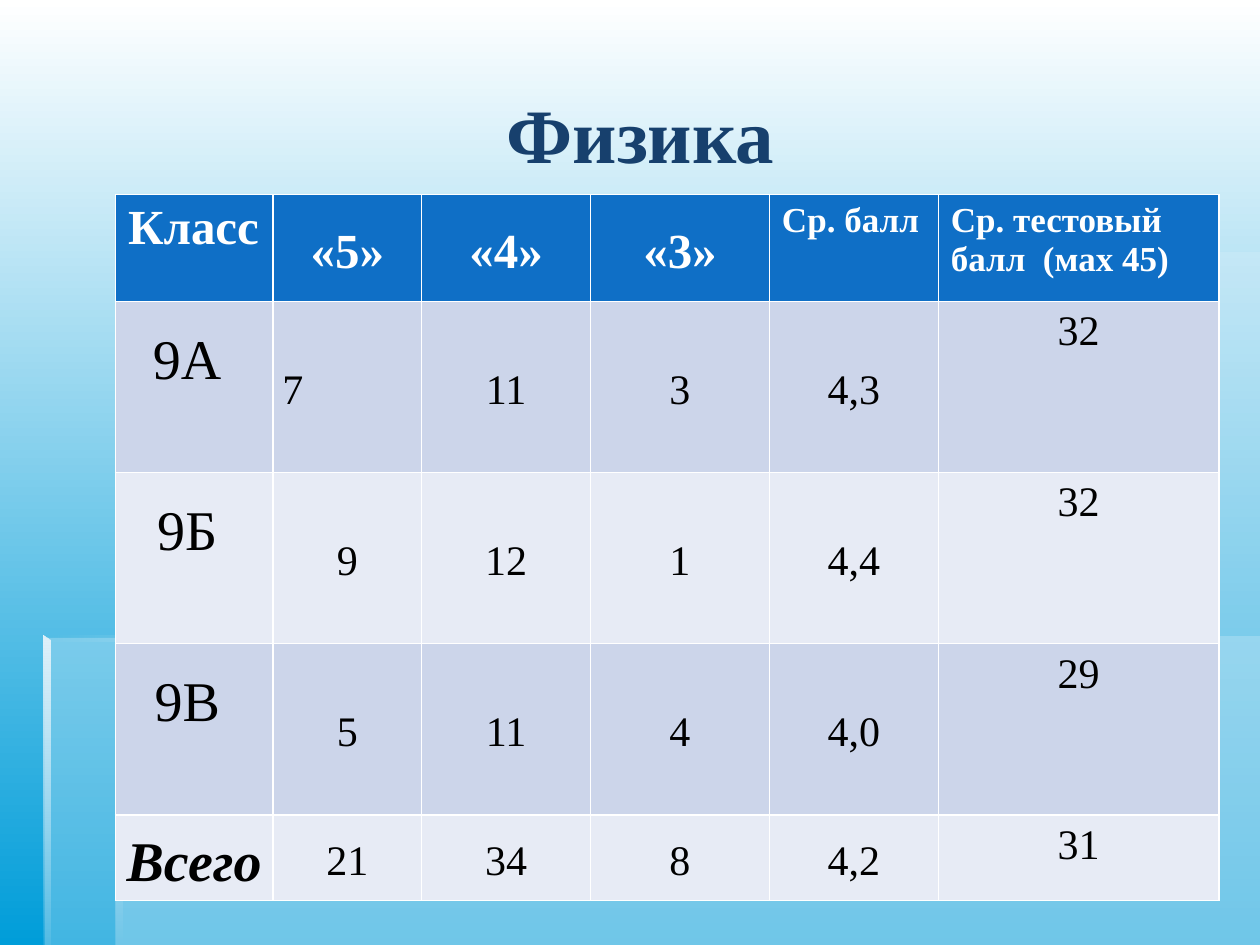
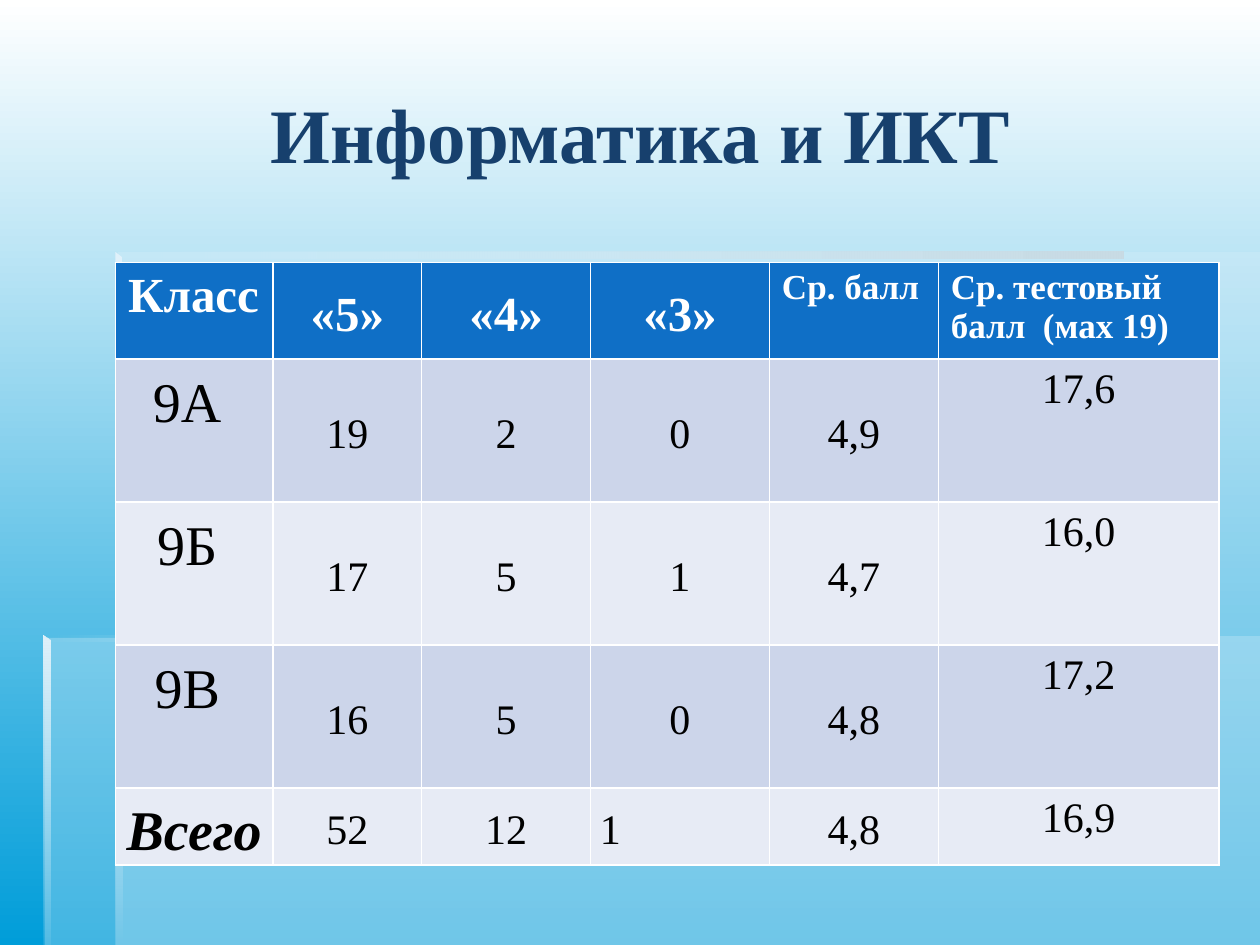
"""Builds two slides with ninth-grade exam results by subject."""
from pptx import Presentation
from pptx import util as u
from pptx.dml import color
from pptx.enum import text
from pptx.oxml import ns
from lxml import etree

FONT = "Times New Roman"
COLORS = {
    "sky_top": "FFFFFF", "sky_bottom": "009DD9", "panel": "DBEFF9",
    "edge_dark": "C9DBE4", "edge_light": "E0F1FA", "title": "17406D",
    "header": "0F6FC6", "header_text": "FFFFFF", "body_text": "000000",
    "odd_row": "CCD5EA", "even_row": "E7EBF5",
}
PAGE = (0, 0, 720, 540)
TITLE_BOX = (36, 19.4, 660, 113)
COLUMN_WIDTHS = (90, 85, 96.5, 102.2, 96.5, 160.5)
CLASSES = ("9А ", "9Б ", "9В ", "Всего ")
DOWN, RIGHT = 270, 0

SUBJECTS = [
    {
        "title": "Физика", "max_score": 45, "top": 111.3,
        "row_heights": (61, 97.8, 97.8, 97.8, 49), "left_aligned": (1, 1),
        "results": [("7", "11", "3", "4,3", "32"), ("9", "12", "1", "4,4", "32"),
                    ("5", "11", "4", "4,0", "29"), ("21", "34", "8", "4,2", "31")],
    },
    {
        "title": "Информатика и ИКТ", "max_score": 19, "top": 149.9,
        "row_heights": (51.5, 81.7, 81.7, 81.7, 41.5), "left_aligned": (4, 3),
        "results": [("19", "2", "0", "4,9", "17,6"), ("17", "5", "1", "4,7", "16,0"),
                    ("16", "5", "0", "4,8", "17,2"), ("52", "12", "1", "4,8", "16,9")],
    },
]


def rgb(name):
    """Return the named colour."""
    return color.RGBColor.from_string(COLORS[name])


def set_gradient(fill, names, angle):
    """Give a fill a gradient between two named colours."""
    fill.gradient()
    fill.gradient_angle = angle
    for stop, name in zip(fill.gradient_stops, names):
        stop.color.rgb = rgb(name)


def add_outline(slide, points, names, opacities, angle=None):
    """Draw a closed outline with a solid or gradient fill and given opacities."""
    corners = [(u.Pt(x), u.Pt(y)) for x, y in points]
    builder = slide.shapes.build_freeform(*corners[0])
    builder.add_line_segments(corners[1:], close=True)
    shape = builder.convert_to_shape()
    shape.shadow.inherit = False
    shape.line.fill.background()
    if angle is None:
        shape.fill.solid()
        shape.fill.fore_color.rgb = rgb(names[0])
    else:
        set_gradient(shape.fill, names, angle)
    fills = shape.element.spPr.iter(ns.qn("a:srgbClr"))
    for fill_color, opacity in zip(fills, opacities):
        if opacity < 100:
            etree.SubElement(fill_color, ns.qn("a:alpha"), val=str(opacity * 1000))


def add_backdrop(slide, box):
    """Fill the background and draw the translucent panels with bevelled edges."""
    left, top, width, height = box
    right, bottom = left + width, top + height
    outer, inner = left + 25.5, left + 66
    upper, lower = top + 144, top + 363.5
    bevel = 3.8

    def top_edge(x, y, length):
        """Draw a horizontal edge that fades in to the right."""
        points = [(x, y), (x, y + bevel), (x + length, y + bevel), (x + length, y)]
        add_outline(slide, points, ("panel", "edge_dark"), (0, 100), RIGHT)

    def side_edge(x, y, end, opacity):
        """Draw a vertical edge with a mitred top."""
        points = [(x, y), (x, end), (x + bevel, end), (x + bevel, y + 3)]
        add_outline(slide, points, ("edge_light", "panel"), (100, opacity), DOWN)

    set_gradient(slide.background.fill, ("sky_top", "sky_bottom"), DOWN)
    add_outline(slide, [(inner, lower), (inner, bottom), (right, bottom), (right, lower)],
                ("panel",), (30,))
    add_outline(slide, [(inner + 1.5, lower + 1), (outer, lower + 1), (outer, bottom),
                        (right, bottom), (right, upper), (inner + 1.5, upper)],
                ("panel",), (30,))
    top_edge(inner, upper, 576)
    side_edge(inner, upper, lower + bevel, 100)
    side_edge(inner, lower - 0.5, bottom, 0)
    top_edge(outer, lower - 0.5, 360)
    side_edge(outer - 0.5, lower - 0.5, bottom, 10)


def format_runs(paragraph, size, color_name, bold=False, italic=False):
    """Format every run of a paragraph."""
    for run in paragraph.runs:
        run.font.name = FONT
        run.font.size = u.Pt(size)
        run.font.bold = bold
        run.font.italic = italic
        run.font.color.rgb = rgb(color_name)


def add_title(slide, box, title):
    """Write the centred slide title."""
    frame = slide.shapes.add_textbox(*map(u.Pt, box)).text_frame
    frame.word_wrap = True
    frame.vertical_anchor = text.MSO_ANCHOR.MIDDLE
    frame.text = title
    paragraph = frame.paragraphs[0]
    paragraph.alignment = text.PP_ALIGN.CENTER
    format_runs(paragraph, 44, "title", bold=True)


def fill_cell(cell, value, row, column, left_aligned):
    """Write and format one cell by its place in the results table."""
    is_header, is_total = row == 0, row == len(CLASSES)
    cell.fill.solid()
    cell.fill.fore_color.rgb = rgb("header" if is_header else "odd_row" if row % 2 else "even_row")
    cell.text_frame.text = value
    paragraph = cell.text_frame.paragraphs[0]
    if is_header:
        format_runs(paragraph, 28 if column < 4 else 20, "header_text", bold=True)
    else:
        emphasis = is_total and column == 0
        format_runs(paragraph, 24 if column else 32, "body_text", emphasis, emphasis)
    if is_header and column not in (1, 2, 3):
        return
    paragraph.line_spacing = 1.15
    paragraph.alignment = text.PP_ALIGN.LEFT if left_aligned else text.PP_ALIGN.CENTER
    cell.margin_left = cell.margin_right = u.Pt(5.4)
    cell.margin_top = cell.margin_bottom = 0
    if column < 5:
        cell.vertical_anchor = text.MSO_ANCHOR.MIDDLE
    if column == 0:
        if is_total:
            properties = paragraph._p.get_or_add_pPr()
            properties.set("marL", "0")
            properties.set("indent", str(-u.Pt(8.5)))
        else:
            cell.margin_bottom = u.Pt(36)


def add_results(slide, box, subject):
    """Add the table of marks and average scores."""
    header = ("Класс", "«5»", "«4»", "«3»", "Ср. балл",
              f"Ср. тестовый балл  (маx {subject['max_score']})")
    rows = [header] + [(name, *marks) for name, marks in zip(CLASSES, subject["results"])]
    table = slide.shapes.add_table(len(rows), len(header), *map(u.Pt, box)).table
    for column, width in zip(table.columns, COLUMN_WIDTHS):
        column.width = u.Pt(width)
    for row, height in zip(table.rows, subject["row_heights"]):
        row.height = u.Pt(height)
    for i, values in enumerate(rows):
        for j, value in enumerate(values):
            fill_cell(table.cell(i, j), value, i, j, (i, j) == subject["left_aligned"])


def add_subject_slide(presentation, subject):
    """Add one subject slide."""
    slide = presentation.slides.add_slide(presentation.slide_layouts[6])
    add_backdrop(slide, PAGE)
    add_title(slide, TITLE_BOX, subject["title"])
    box = (66, subject["top"], sum(COLUMN_WIDTHS), sum(subject["row_heights"]))
    add_results(slide, box, subject)


def main():
    """Build and save the presentation."""
    presentation = Presentation()
    presentation.slide_width, presentation.slide_height = map(u.Pt, PAGE[2:])
    for subject in SUBJECTS:
        add_subject_slide(presentation, subject)
    presentation.save("out.pptx")


if __name__ == "__main__":
    main()
